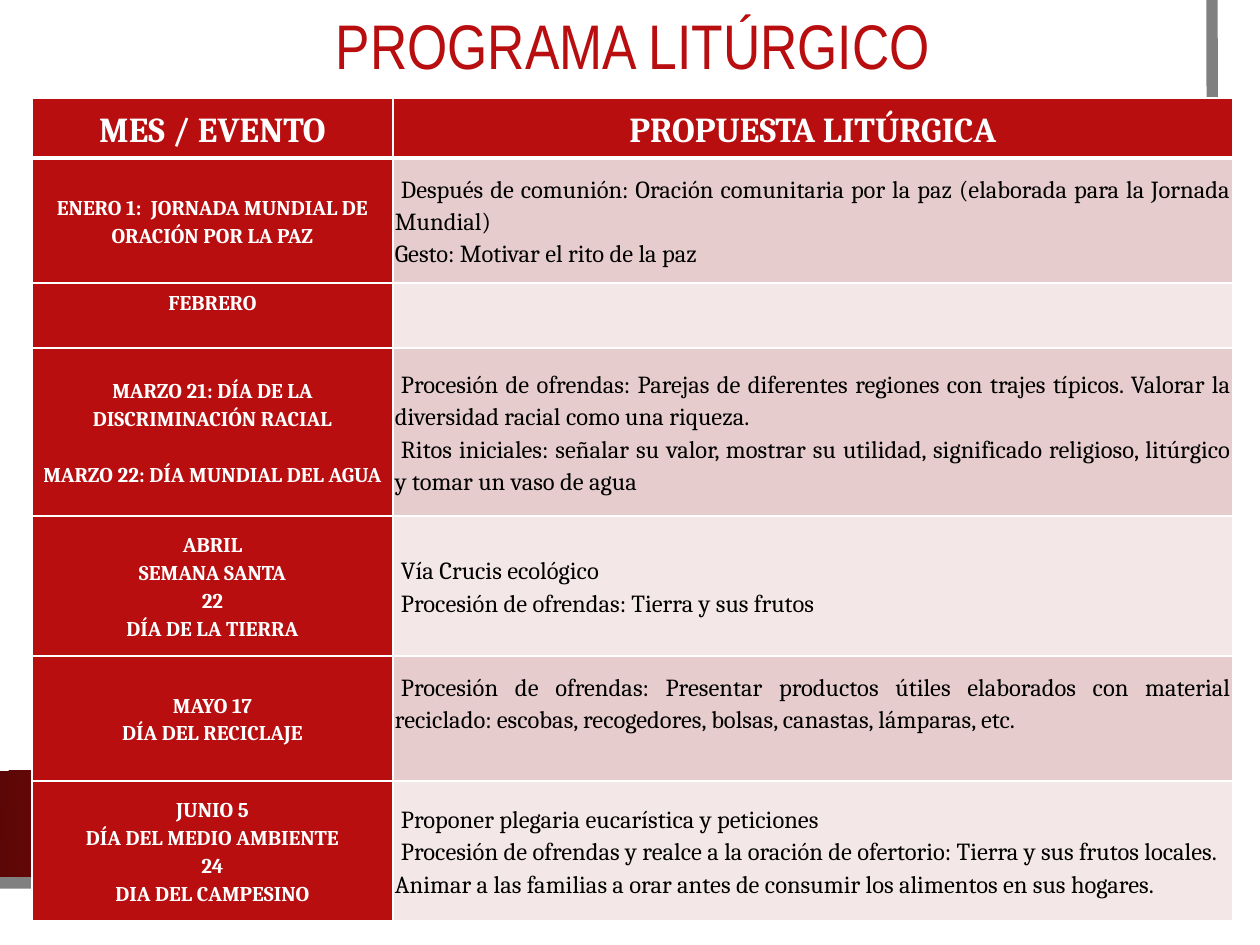
from pptx import Presentation
from pptx.dml.color import RGBColor
from pptx.enum.shapes import MSO_SHAPE
from pptx.enum.text import MSO_ANCHOR, PP_ALIGN
from pptx.oxml import parse_xml
from pptx.oxml.ns import nsdecls
from pptx.util import Pt

PX = 7257  # EMU per px, 126 px to the inch
RED = RGBColor(0xB8, 0x0E, 0x0F)
DARK = RGBColor(0x5C, 0x07, 0x07)
GRAY = RGBColor(0x80, 0x80, 0x80)
ROSE = RGBColor(0xE6, 0xCC, 0xCC)
PALE = RGBColor(0xF3, 0xE7, 0xE7)
WHITE = RGBColor(0xFF, 0xFF, 0xFF)
BLACK = RGBColor(0, 0, 0)

HEAD = {"size": Pt(20), "name": "Cambria", "bold": True}
EVENT = {"size": Pt(12), "name": "Cambria", "bold": True}
PLAN = {"size": Pt(14), "name": "Cambria", "bold": False}
TITLE = {"size": Pt(36), "name": "Arial Narrow", "bold": False}

# Row height, events, proposals
ROWS = [
    (60, ["MES / EVENTO"], ["PROPUESTA LITÚRGICA"]),
    (125, ["ENERO 1:  JORNADA MUNDIAL DE ORACIÓN POR LA PAZ"],
     ["Después de comunión: Oración comunitaria por la paz (elaborada para la Jornada Mundial)",
      "Gesto: Motivar el rito de la paz"]),
    (65, ["FEBRERO"], []),
    (168, ["MARZO 21: DÍA DE LA DISCRIMINACIÓN RACIAL", "MARZO 22: DÍA MUNDIAL DEL AGUA"],
     ["Procesión de ofrendas: Parejas de diferentes regiones con trajes típicos. "
      "Valorar la diversidad racial como una riqueza.",
      "Ritos iniciales: señalar su valor, mostrar su utilidad, significado religioso, "
      "litúrgico y tomar un vaso de agua"]),
    (140, ["ABRIL", "SEMANA SANTA", "22", "DÍA DE LA TIERRA"],
     ["Vía Crucis ecológico", "Procesión de ofrendas: Tierra y sus frutos"]),
    (125, ["MAYO 17", "DÍA DEL RECICLAJE"],
     ["Procesión de ofrendas: Presentar productos útiles elaborados con material reciclado: "
      "escobas, recogedores, bolsas, canastas, lámparas, etc."]),
    (140, ["JUNIO 5", "DÍA DEL MEDIO AMBIENTE", "24", "DIA DEL CAMPESINO"],
     ["Proponer plegaria eucarística y peticiones",
      "Procesión de ofrendas y realce a la oración de ofertorio: Tierra y sus frutos locales.",
      "Animar a las familias a orar antes de consumir los alimentos en sus hogares."]),
]
FLUSH = ("Gesto", "Animar")  # proposals without first-line indent
COLS = [361, 840]


def write(frame, lines, style, color, align, space):
    for n, line in enumerate(lines):
        para = frame.paragraphs[0] if n == 0 else frame.add_paragraph()
        para.alignment = align
        para.line_spacing = space
        run = para.add_run()
        run.text = line
        for key, value in style.items():
            setattr(run.font, key, value)
        run.font.color.rgb = color


def edge(cell, base):
    """Draw white cell borders, with the bottom one base points wide."""
    props = cell._tc.get_or_add_tcPr()
    for side, width in (("L", 1), ("R", 1), ("T", 1), ("B", base)):
        props.append(parse_xml(
            f'<a:ln{side} {nsdecls("a")} w="{Pt(width)}"><a:solidFill>'
            f'<a:srgbClr val="{WHITE}"/></a:solidFill></a:ln{side}>'))


deck = Presentation()
deck.slide_width = 1260 * PX
deck.slide_height = 945 * PX
slide = deck.slides.add_slide(deck.slide_layouts[6])
shapes = slide.shapes

# Page and red band
page = shapes.add_shape(MSO_SHAPE.RECTANGLE, 0, 0, 1239 * PX, 916 * PX)
page.fill.solid()
page.fill.fore_color.rgb = WHITE
band = shapes.add_shape(MSO_SHAPE.RECTANGLE, 0, 771 * PX, 1210 * PX, 107 * PX)
band.fill.gradient()
for stop, color, place in zip(band.fill.gradient_stops, (RED, DARK), (0.34, 1)):
    stop.color.rgb = color
    stop.position = place
line = band.fill._fill._gradFill.find("{*}lin")
line.getparent().replace(line, parse_xml(
    f'<a:path {nsdecls("a")} path="circle">'
    '<a:fillToRect l="50000" t="50000" r="50000" b="50000"/></a:path>'))
for shape in (page, band):
    shape.shadow.inherit = False
    shape.line.fill.background()

# Gray frame along the right and bottom
pen = shapes.build_freeform(1212, 0, scale=PX)
pen.add_line_segments([(1214, 884), (-2, 883)], close=False)
frame = pen.convert_to_shape()
frame.shadow.inherit = False
frame.fill.background()
frame.line.color.rgb = GRAY
frame.line.width = Pt(6.5)

# Title
title = shapes.add_textbox(236 * PX, 0, 794 * PX, 98 * PX).text_frame
title.word_wrap = True
title.vertical_anchor = MSO_ANCHOR.MIDDLE
write(title, ["PROGRAMA LITÚRGICO"], TITLE, RED, PP_ALIGN.CENTER, 0.9)

# Program table
high = sum(row[0] for row in ROWS)
table = shapes.add_table(len(ROWS), 2, 32 * PX, 98 * PX, sum(COLS) * PX, high * PX).table
table.first_row = table.horz_banding = False
for col, width in zip(table.columns, COLS):
    col.width = width * PX
for r, (height, *texts) in enumerate(ROWS):
    table.rows[r].height = height * PX
    for c, lines in enumerate(texts):
        cell = table.cell(r, c)
        edge(cell, 3 if r == 0 else 1)
        cell.vertical_anchor = MSO_ANCHOR.MIDDLE
        cell.margin_left = cell.margin_right = 2 * PX
        cell.margin_top = cell.margin_bottom = 0
        cell.fill.solid()
        plan = r > 0 and c == 1
        cell.fill.fore_color.rgb = (ROSE if r % 2 else PALE) if plan else RED
        style = HEAD if r == 0 else PLAN if plan else EVENT
        align = PP_ALIGN.JUSTIFY if plan else PP_ALIGN.CENTER
        write(cell.text_frame, lines, style, BLACK if plan else WHITE, align, 1.15)
        for para in cell.text_frame.paragraphs:
            if plan and lines and not para.text.startswith(FLUSH):
                para._p.get_or_add_pPr().set("indent", str(6 * PX))

# Gaps below and between entries
table.cell(2, 0).margin_bottom = 28 * PX
table.cell(5, 1).margin_bottom = 32 * PX
table.cell(3, 0).text_frame.paragraphs[1].space_before = Pt(16)

deck.save("out.pptx")
